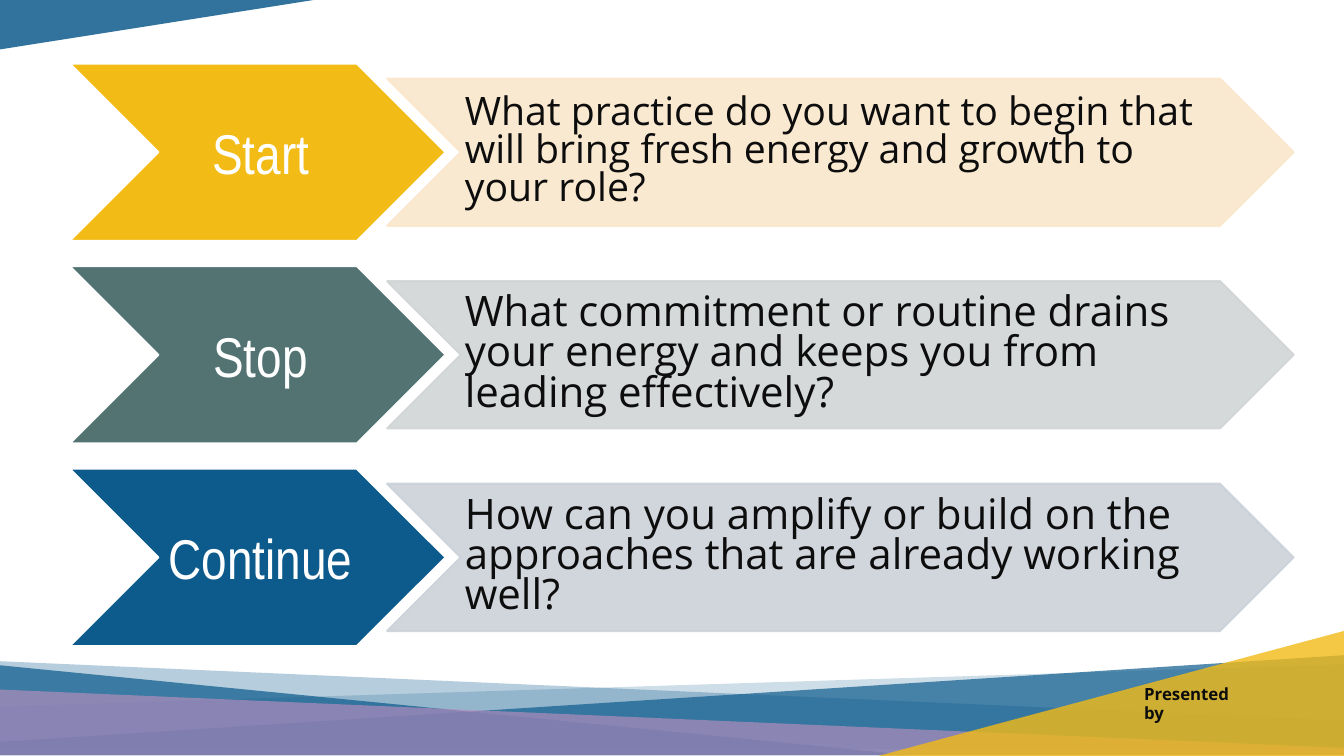
from lxml.etree import SubElement
from pptx import Presentation
from pptx.dml.color import RGBColor
from pptx.enum.shapes import MSO_SHAPE
from pptx.enum.text import MSO_ANCHOR, PP_ALIGN
from pptx.oxml.ns import qn
from pptx.util import Inches, Pt

WIDTH, HEIGHT = 13.33, 7.5
BLUE, YELLOW, GREEN, PURPLE = "0D5B8C", "F2BB16", "537373", "B98EBF"
WHITE, INK = "FFFFFF", "0D0D0D"

# Corner points, colour and opacity in percent, from back to front
BANDS = [
    ([(WIDTH, 7.15), (WIDTH, 7.43), (0, 7.43), (0, 6.56)], BLUE, 30),
    ([(WIDTH, 6.59), (WIDTH, 7.49), (0, 7.49), (0, 7.01)], BLUE, 20),
    ([(0, 6.6), (9.02, 7.49), (0, 7.49)], BLUE, 72),
    ([(WIDTH, 6.5), (WIDTH, 7.49), (0, 7.49), (0, 7.36)], BLUE, 70),
    ([(0, 6.84), (0, 7.49), (WIDTH, 7.49), (WIDTH, 7.42)], PURPLE, 65),
    ([(WIDTH, 6.26), (WIDTH, HEIGHT), (8.71, HEIGHT)], YELLOW, 80),
    ([(0, 0), (3.11, 0), (0, 0.49)], BLUE, 85),
]

# Label, label colour, question, question colour, question size
ROWS = [
    ("Start", YELLOW, "What practice do you want to begin that will bring fresh energy "
     "and growth to your role?", "FAE7CC", 28),
    ("Stop", GREEN, "What commitment or routine drains your energy and keeps you from "
     "leading effectively?", "D1D5D5", 30),
    ("Continue", BLUE, "How can you amplify or build on the approaches that are already "
     "working well?", "CCD2DA", 30),
]
ROW_HEIGHT, ROW_STEP = 1.76, 2.01


def paint(fill, color, opacity=100):
    """Make a fill solid, with its opacity in percent."""
    fill.solid()
    fill.fore_color.rgb = RGBColor.from_string(color)
    if opacity < 100:
        tint = fill._xPr.find(qn("a:solidFill"))[0]
        SubElement(tint, qn("a:alpha"), val=str(opacity * 1000))


def write(shape, text, font, size, color, insets, align=PP_ALIGN.LEFT,
          spacing=1.0, anchor=MSO_ANCHOR.MIDDLE, bold=False):
    frame = shape.text_frame
    frame.word_wrap = True
    frame.vertical_anchor = anchor
    (frame.margin_left, frame.margin_top,
     frame.margin_right, frame.margin_bottom) = map(Inches, insets)
    para = frame.paragraphs[0]
    para.text = text
    para.alignment = align
    para.line_spacing = spacing
    para.font.name = font
    para.font.size = Pt(size)
    para.font.bold = bold
    para.font.color.rgb = RGBColor.from_string(color)


def add_band(page, points, color, opacity):
    corners = [(Inches(x), Inches(y)) for x, y in points]
    builder = page.shapes.build_freeform(*corners[0])
    builder.add_line_segments(corners[1:])
    band = builder.convert_to_shape()
    band.shadow.inherit = False
    paint(band.fill, color, opacity)
    band.line.fill.background()


def add_chevron(page, left, top, width, height, color, line_color, opacity=100):
    chevron = page.shapes.add_shape(
        MSO_SHAPE.CHEVRON, Inches(left), Inches(top), Inches(width), Inches(height))
    chevron.shadow.inherit = False
    paint(chevron.fill, color, opacity)
    paint(chevron.line.fill, line_color, opacity)
    chevron.line.width = Pt(1.5)
    return chevron


def add_row(page, left, top, label, color, question, pale, size):
    head = add_chevron(page, left, top, 3.73, ROW_HEIGHT, color, WHITE)
    write(head, label, "Arial Narrow", 40, WHITE, (0.06, 0.03, 0, 0.03), PP_ALIGN.CENTER)
    body = add_chevron(page, left + 3.15, top + 0.15, 8.99, ROW_HEIGHT - 0.3, pale, pale, 90)
    write(body, question, "Open Sans", size, INK, (0.04, 0.02, 0, 0.02), spacing=0.8)


def add_footer(page, left, top):
    footer = page.shapes.add_textbox(Inches(left), Inches(top), Inches(1.22), Inches(0.28))
    write(footer, "Presented by", "Open Sans", 12, INK, (0.1, 0.05, 0.1, 0.05),
          spacing=0.9, anchor=MSO_ANCHOR.TOP, bold=True)


def main():
    deck = Presentation()
    deck.slide_width, deck.slide_height = Inches(WIDTH), Inches(HEIGHT)
    page = deck.slides.add_slide(deck.slide_layouts[6])
    for band in BANDS:
        add_band(page, *band)
    add_footer(page, 11.25, 6.76)
    for index, row in enumerate(ROWS):
        add_row(page, 0.69, 0.63 + index * ROW_STEP, *row)
    deck.save("out.pptx")


if __name__ == "__main__":
    main()
